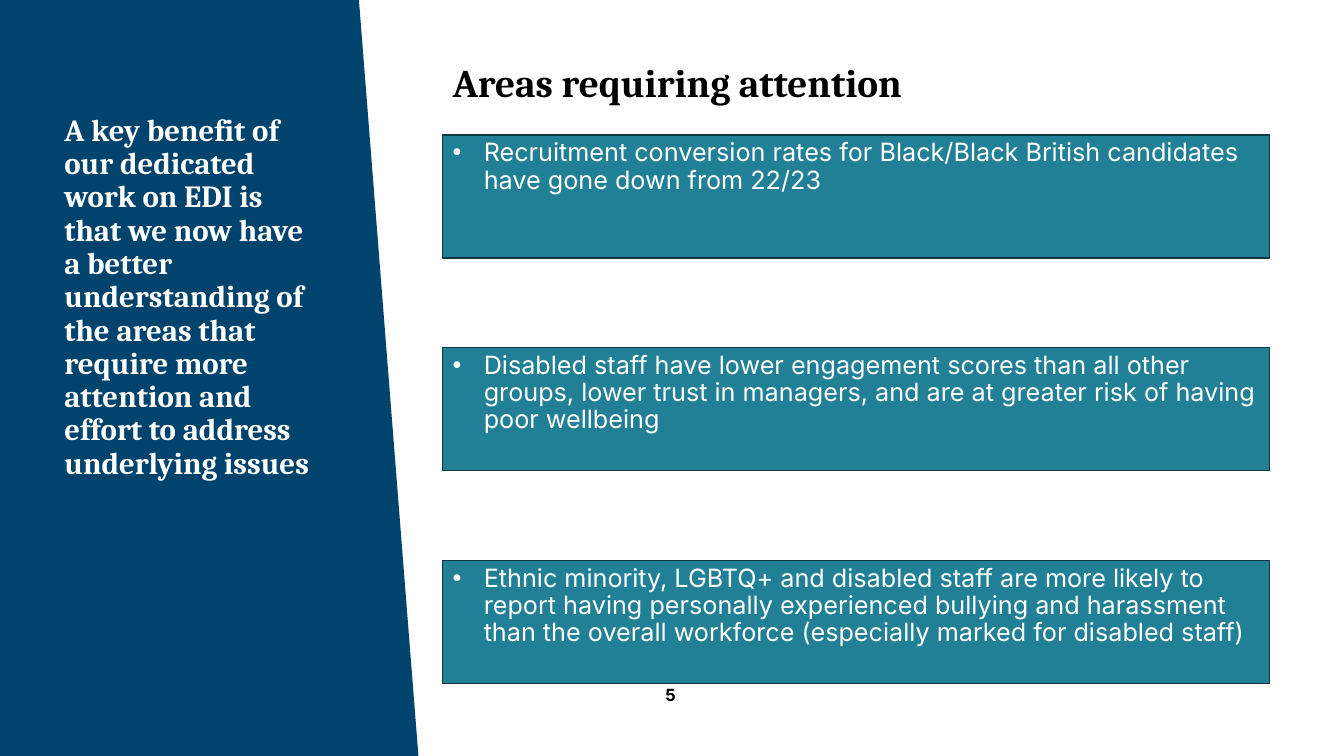
from dataclasses import dataclass

from lxml import etree
from pptx import Presentation
from pptx import util as u
from pptx.dml.color import RGBColor
from pptx.enum import shapes, text
from pptx.oxml import ns

PX = 9144  # EMU per px, 100 px to the inch
WIDE, HIGH = 1333, 750
NAVY, TEAL, EDGE = "00436C", "228096", "0F3842"
WHITE, BLACK = "FFFFFF", "000000"
SERIF, SANS = "Cambria", "Inter"


@dataclass
class Label:
    words: str
    box: tuple[int, int, int, int]
    font: str
    size: int
    color: str
    top: int = 5
    line: float = 0.9
    align: text.PP_ALIGN = text.PP_ALIGN.LEFT


LABELS = [
    Label("5", (515, 674, 300, 40), SANS, 12, BLACK,
          line=1.0, align=text.PP_ALIGN.CENTER),
    Label("A key benefit of our dedicated work on EDI is that we now have "
          "a better understanding of the areas that require more attention "
          "and effort to address underlying issues",
          (54, 76, 266, 458), SERIF, 22, WHITE, top=38),
    Label("Areas requiring attention", (439, 58, 681, 74), SERIF, 28, BLACK),
]

AREAS = [
    "Recruitment conversion rates for Black/Black British candidates "
    "have gone down from 22/23",
    "Disabled staff have lower engagement scores than all other groups, "
    "lower trust in managers, and are at greater risk of having poor wellbeing",
    "Ethnic minority, LGBTQ+ and disabled staff are more likely to report "
    "having personally experienced bullying and harassment than the overall "
    "workforce (especially marked for disabled staff)",
]
LEFT, TOP, STEP = 439, 134, 211
CARD_W, CARD_H = 820, 122
INDENT = 31


def px(n: int) -> u.Emu:
    return u.Emu(n * PX)


def rgb(color: str) -> RGBColor:
    return RGBColor.from_string(color)


def paint(shape, fill: str) -> None:
    shape.shadow.inherit = False
    shape.fill.solid()
    shape.fill.fore_color.rgb = rgb(fill)


def write(shape, label: Label, bold: bool = True, bullet: bool = False) -> None:
    frame = shape.text_frame
    frame.word_wrap = True
    frame.vertical_anchor = text.MSO_ANCHOR.TOP
    frame.margin_left = frame.margin_right = px(10)
    frame.margin_top, frame.margin_bottom = px(label.top), px(5)
    para = frame.paragraphs[0]
    para.alignment = label.align
    para.line_spacing = label.line
    if bullet:
        props = para._p.get_or_add_pPr()
        props.set("marL", str(px(INDENT)))
        props.set("indent", str(px(-INDENT)))
        face = etree.SubElement(props, ns.qn("a:buFont"))
        face.set("typeface", "Arial")
        mark = etree.SubElement(props, ns.qn("a:buChar"))
        mark.set("char", "•")
    run = para.add_run()
    run.text = label.words
    run.font.name = label.font
    run.font.size = u.Pt(label.size)
    run.font.bold = bold
    run.font.color.rgb = rgb(label.color)


def add_panel(slide) -> None:
    pen = slide.shapes.build_freeform(0, 0, scale=PX)
    pen.add_line_segments([(356, 0), (415, HIGH), (0, HIGH)], close=True)
    panel = pen.convert_to_shape()
    paint(panel, NAVY)
    panel.line.fill.background()


def add_label(slide, label: Label) -> None:
    write(slide.shapes.add_textbox(*map(px, label.box)), label)


def add_card(slide, row: int, words: str) -> None:
    box = (LEFT, TOP + row * STEP, CARD_W, CARD_H)
    card = slide.shapes.add_shape(shapes.MSO_SHAPE.RECTANGLE, *map(px, box))
    paint(card, TEAL)
    card.line.color.rgb = rgb(EDGE)
    card.line.width = u.Pt(1)
    write(card, Label(words, box, SANS, 18, WHITE), bold=False, bullet=True)


def main() -> None:
    deck = Presentation()
    deck.slide_width, deck.slide_height = px(WIDE), px(HIGH)
    slide = deck.slides.add_slide(deck.slide_layouts[6])

    # Slanted side panel
    add_panel(slide)

    # Page number, key message and heading
    for label in LABELS:
        add_label(slide, label)

    # Areas, evenly stacked
    for row, words in enumerate(AREAS):
        add_card(slide, row, words)

    deck.save("out.pptx")


if __name__ == "__main__":
    main()
